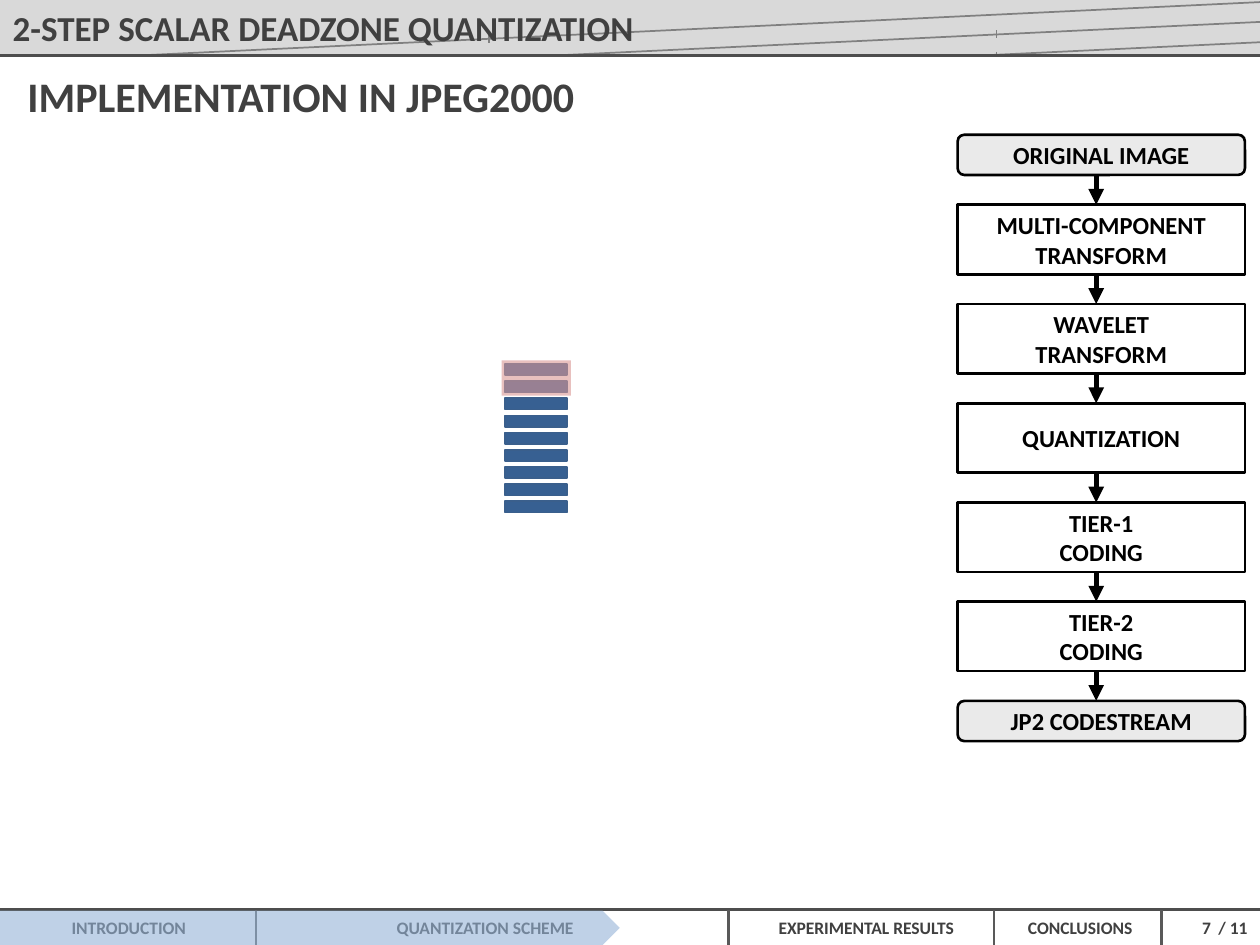
"""Build the JPEG2000 implementation slide with its coding pipeline."""
import pptx
import pptx.dml.color
import pptx.enum.shapes
import pptx.enum.text
import pptx.oxml.ns
import pptx.oxml.xmlchemy
import pptx.util

Pt = pptx.util.Pt
SHAPE = pptx.enum.shapes.MSO_SHAPE
ALIGN = pptx.enum.text.PP_ALIGN
WIDTH, HEIGHT = 720, 540

THEME = {
    "font": "Calibri",
    "size": {"title": 20, "heading": 24, "step": 14, "footer": 10},
    "color": {
        "text": "404040", "black": "000000", "header": "D9D9D9",
        "rule": "4D4D4D", "separator": "595959", "decoration": "808080",
        "terminal": "EAEAEA", "bar": "376092", "bar_line": "3A5F8C",
        "highlight": "D99694", "progress": "95B3D7",
    },
}

TITLE = ("2-STEP SCALAR DEADZONE QUANTIZATION", (0, 0, 372.2, 31.7))
HEADING = ("IMPLEMENTATION IN JPEG2000", (8.6, 36.7, 329.8, 36))
STEPS = [
    ["ORIGINAL IMAGE"],
    ["MULTI-COMPONENT", "TRANSFORM"],
    ["WAVELET", "TRANSFORM"],
    ["QUANTIZATION"],
    ["TIER-1", "CODING"],
    ["TIER-2", "CODING"],
    ["JP2 CODESTREAM"],
]
FOOTER = [
    ("INTRODUCTION", 33.8, 80.6, ALIGN.LEFT),
    ("QUANTIZATION SCHEME", 219.6, 118.1, ALIGN.LEFT),
    ("EXPERIMENTAL RESULTS", 437.8, 118.1, ALIGN.LEFT),
    ("CONCLUSIONS", 580.3, 75.6, ALIGN.LEFT),
    ("7", 679.7, 19.4, ALIGN.RIGHT),
    ("/ 11", 688.3, 31.7, ALIGN.RIGHT),
]
SEPARATORS = [146.2, 416.2, 568.1, 663.8]
HEADER_BOTTOM, FOOTER_TOP = 31.7, 519.8
DECORATION_SLOPE = -40 / 840
DECORATION_LINES = [(35.3, 33.8), (40.3, 44.9), (40.3, 56.5)]
DECORATION_TICKS = [(569.5, 17.3, 21.6), (279.4, 19.4, 24.5),
                    (277.2, 31, HEADER_BOTTOM), (569.5, 29.5, HEADER_BOTTOM)]
FLOW = {"left": 547.2, "top": 77, "width": 164.2, "terminal": 23,
        "step": 39.7, "gap": 17, "arrow": 626.4}
BARS = {"count": 9, "left": 288.7, "top": 208, "width": 35.3,
        "height": 6.5, "pitch": 9.8}


def color(name):
    return pptx.dml.color.RGBColor.from_string(THEME["color"][name])


def add_element(parent, tag, **attributes):
    element = pptx.oxml.xmlchemy.OxmlElement(tag)
    for name, value in attributes.items():
        element.set(name, value)
    parent.append(element)


def write(shape, lines, role, text_color="text", align=ALIGN.LEFT):
    frame = shape.text_frame
    frame_format = {
        "word_wrap": False,
        "auto_size": pptx.enum.text.MSO_AUTO_SIZE.NONE,
        "vertical_anchor": pptx.enum.text.MSO_ANCHOR.MIDDLE,
    }
    for name, value in frame_format.items():
        setattr(frame, name, value)
    font_format = {"name": THEME["font"], "size": Pt(THEME["size"][role]), "bold": True}
    frame.text = "\n".join(lines)
    for paragraph in frame.paragraphs:
        paragraph.alignment = align
        for name, value in font_format.items():
            setattr(paragraph.font, name, value)
        paragraph.font.color.rgb = color(text_color)


def add_text(slide, text, box, role, align=ALIGN.LEFT):
    write(slide.shapes.add_textbox(*map(Pt, box)), [text], role, align=align)


def add_box(slide, kind, box, fill=None, line=None, line_width=1.5, opacity=None):
    shape = slide.shapes.add_shape(kind, *map(Pt, box))
    shape.shadow.inherit = False
    if fill:
        shape.fill.solid()
        shape.fill.fore_color.rgb = color(fill)
    else:
        shape.fill.background()
    if line:
        shape.line.color.rgb = color(line)
        shape.line.width = Pt(line_width)
    else:
        shape.line.fill.background()
    if opacity:
        solid = shape.element.spPr.find(pptx.oxml.ns.qn("a:solidFill"))
        add_element(solid[0], "a:alpha", val=str(opacity * 1000))
    return shape


def add_line(slide, start, end, line, width=1.5, arrow=False):
    connector = slide.shapes.add_connector(
        pptx.enum.shapes.MSO_CONNECTOR.STRAIGHT, *map(Pt, start + end))
    connector.line.color.rgb = color(line)
    connector.line.width = Pt(width)
    properties = connector.element.spPr
    if arrow:
        add_element(properties.find(pptx.oxml.ns.qn("a:ln")), "a:tailEnd", type="triangle")
    add_element(properties, "a:effectLst")


def add_header(slide):
    add_box(slide, SHAPE.RECTANGLE, (0, 0, WIDTH, HEADER_BOTTOM), "header")
    for left, top in DECORATION_LINES:
        start = left + (HEADER_BOTTOM - top) / DECORATION_SLOPE
        end = top + (WIDTH - left) * DECORATION_SLOPE
        add_line(slide, (start, HEADER_BOTTOM), (WIDTH, end), "decoration", 1)
    for left, top, bottom in DECORATION_TICKS:
        add_line(slide, (left, top), (left, bottom), "decoration", 1)
    add_line(slide, (0, HEADER_BOTTOM), (WIDTH, HEADER_BOTTOM), "rule")
    text, box = TITLE
    title = slide.shapes.title
    for name, value in zip(("left", "top", "width", "height"), box):
        setattr(title, name, Pt(value))
    write(title, [text], "title")
    title.element.getparent().append(title.element)


def add_flow(slide):
    top = FLOW["top"]
    for index, lines in enumerate(STEPS):
        terminal = index in (0, len(STEPS) - 1)
        height = FLOW["terminal" if terminal else "step"]
        if index:
            add_line(slide, (FLOW["arrow"], top - FLOW["gap"]), (FLOW["arrow"], top),
                     "black", 3, arrow=True)
        shape = add_box(slide, SHAPE.ROUNDED_RECTANGLE if terminal else SHAPE.RECTANGLE,
                        (FLOW["left"], top, FLOW["width"], height),
                        "terminal" if terminal else None, "black")
        write(shape, lines, "step", "black", ALIGN.CENTER)
        top += height + FLOW["gap"]


def add_bars(slide):
    for index in range(BARS["count"]):
        top = BARS["top"] + index * BARS["pitch"]
        add_box(slide, SHAPE.RECTANGLE, (BARS["left"], top, BARS["width"], BARS["height"]),
                "bar", "bar_line", 1)
    add_box(slide, SHAPE.RECTANGLE, (286.6, 205.9, 39.6, 20.2), "highlight", opacity=60)


def add_footer(slide):
    add_line(slide, (0, FOOTER_TOP), (WIDTH, FOOTER_TOP), "rule")
    for left in SEPARATORS:
        add_line(slide, (left, FOOTER_TOP), (left, HEIGHT), "separator")
    for text, left, width, align in FOOTER:
        add_text(slide, text, (left, 520.6, width, 19.4), "footer", align)
    add_box(slide, SHAPE.PENTAGON, (0, 520.4, 354.2, 19.6), "progress", opacity=60)


def main():
    presentation = pptx.Presentation()
    presentation.slide_width, presentation.slide_height = Pt(WIDTH), Pt(HEIGHT)
    slide = presentation.slides.add_slide(presentation.slide_layouts[5])
    add_header(slide)
    add_text(slide, *HEADING, "heading")
    add_flow(slide)
    add_bars(slide)
    add_footer(slide)
    presentation.save("out.pptx")


if __name__ == "__main__":
    main()
